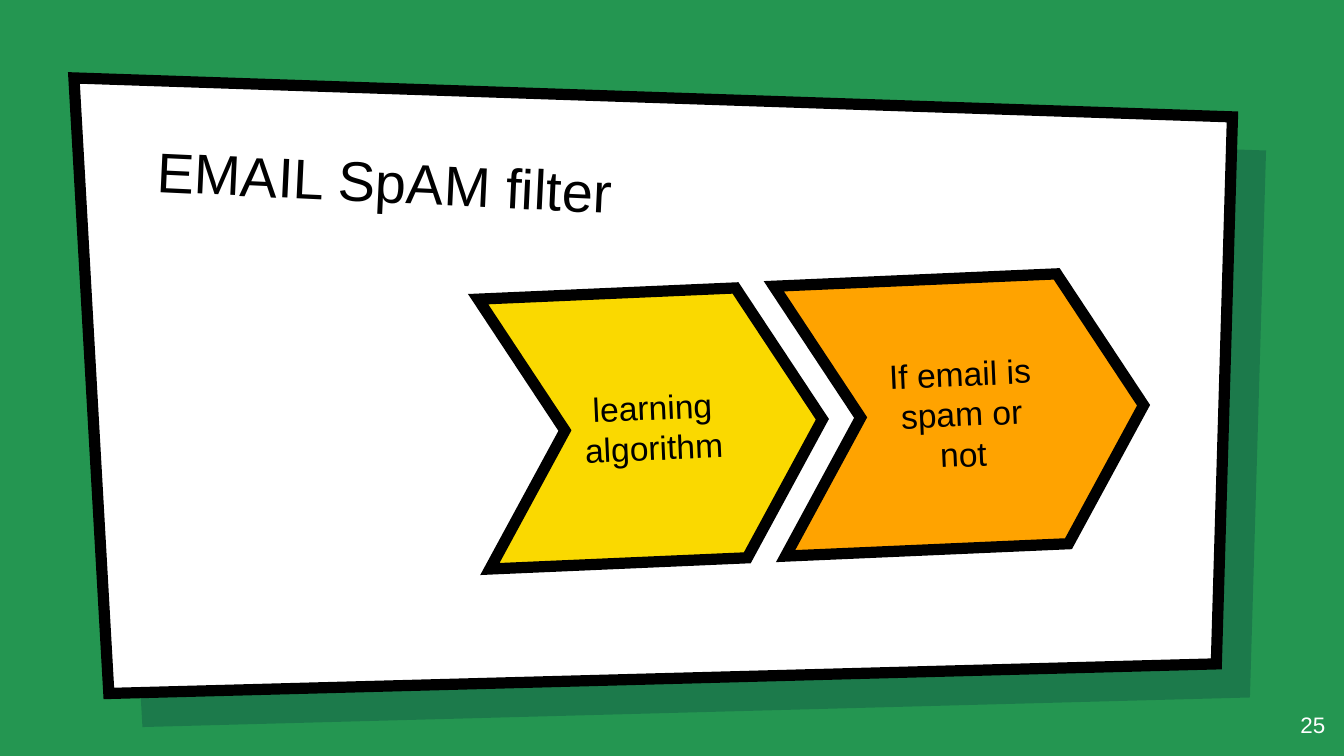
from dataclasses import dataclass
from lxml import etree
from pptx import Presentation, util as u
from pptx.dml.color import RGBColor
from pptx.enum import shapes as sh, text as tx
from pptx.oxml.ns import qn

GREEN = RGBColor(0x24, 0x96, 0x51)
NAVY = RGBColor(0x00, 0x19, 0x36)
WHITE = RGBColor(0xFF, 0xFF, 0xFF)
BLACK = RGBColor(0x00, 0x00, 0x00)
ORANGE = RGBColor(0xFF, 0xA3, 0x00)
YELLOW = RGBColor(0xFA, 0xD9, 0x00)

PANEL = [(0.55, 0.58), (9.17, 0.87), (9.05, 4.94), (0.81, 5.16)]
SHIFT = 0.25
LEFT, MID, RIGHT = tx.PP_ALIGN.LEFT, tx.PP_ALIGN.CENTER, tx.PP_ALIGN.RIGHT


@dataclass
class Label:
    words: str
    box: tuple[float, float, float, float]
    size: float
    color: RGBColor = BLACK
    align: tx.PP_ALIGN = LEFT
    anchor: tx.MSO_ANCHOR = tx.MSO_ANCHOR.TOP
    turn: float = 0


@dataclass
class Step(Label):
    fill: RGBColor = YELLOW


def write(shape, label: Label) -> None:
    """Put the label's text in a shape and turn it."""
    shape.rotation = label.turn
    frame = shape.text_frame
    form = {"word_wrap": True, "vertical_anchor": label.anchor}
    for side in ("left", "right", "top", "bottom"):
        form[f"margin_{side}"] = u.Inches(0.1)
    for key, val in form.items():
        setattr(frame, key, val)
    para = frame.paragraphs[0]
    para.alignment = label.align
    run = para.add_run()
    run.text = label.words
    for key, val in {"name": "Arial", "size": u.Pt(label.size)}.items():
        setattr(run.font, key, val)
    run.font.color.rgb = label.color


def paint(shape, fill: RGBColor, edge: bool = True, alpha: int = 100) -> None:
    """Fill a shape, with a thick sharp-cornered outline if wanted."""
    shape.shadow.inherit = False
    shape.fill.solid()
    shape.fill.fore_color.rgb = fill
    if alpha < 100:
        color = shape.fill._xPr.find(f".//{qn('a:srgbClr')}")
        etree.SubElement(color, qn("a:alpha"), val=str(alpha * 1000))
    if edge:
        shape.line.color.rgb = BLACK
        shape.line.width = u.Pt(6)
        etree.SubElement(shape.line._get_or_add_ln(), qn("a:miter"), lim="800000")
    else:
        shape.line.fill.background()


def panel(slide, shift: float):
    """Draw the slanted panel, moved right and down by shift."""
    pts = [(u.Inches(x + shift), u.Inches(y + shift)) for x, y in PANEL]
    pen = slide.shapes.build_freeform(*pts[0])
    pen.add_line_segments(pts[1:], close=True)
    return pen.convert_to_shape()


def note(slide, label: Label) -> None:
    write(slide.shapes.add_textbox(*map(u.Inches, label.box)), label)


def arrow(slide, step: Step) -> None:
    shape = slide.shapes.add_shape(
        sh.MSO_SHAPE.CHEVRON, *map(u.Inches, step.box))
    shape.adjustments[0] = 0.3
    paint(shape, step.fill)
    write(shape, step)


def main() -> None:
    deck = Presentation()
    # Widescreen, 16 to 9
    deck.slide_width = u.Inches(10)
    deck.slide_height = u.Inches(10 * 9 / 16)
    slide = deck.slides.add_slide(deck.slide_layouts[6])
    slide.background.fill.solid()
    slide.background.fill.fore_color.rgb = GREEN

    # Panel and its shade
    paint(panel(slide, SHIFT), NAVY, edge=False, alpha=22)
    paint(panel(slide, 0), WHITE)

    # Title and page number
    note(slide, Label("EMAIL SpAM filter", (1.07, 0.96, 7.69, 0.83), 30,
                      anchor=tx.MSO_ANCHOR.BOTTOM, turn=2.7))
    note(slide, Label("25", (9.36, 5.19, 0.6, 0.43), 12, WHITE, RIGHT))

    # Steps
    look = {"size": 18, "align": MID, "anchor": tx.MSO_ANCHOR.MIDDLE,
            "turn": 357.5}
    steps = [
        Step("If email is spam or not", (5.8, 2.07, 2.71, 2.01),
             fill=ORANGE, **look),
        Step("learning algorithm", (3.6, 2.17, 2.52, 2.01),
             fill=YELLOW, **look),
    ]
    for step in steps:
        arrow(slide, step)

    deck.save("out.pptx")


if __name__ == "__main__":
    main()
